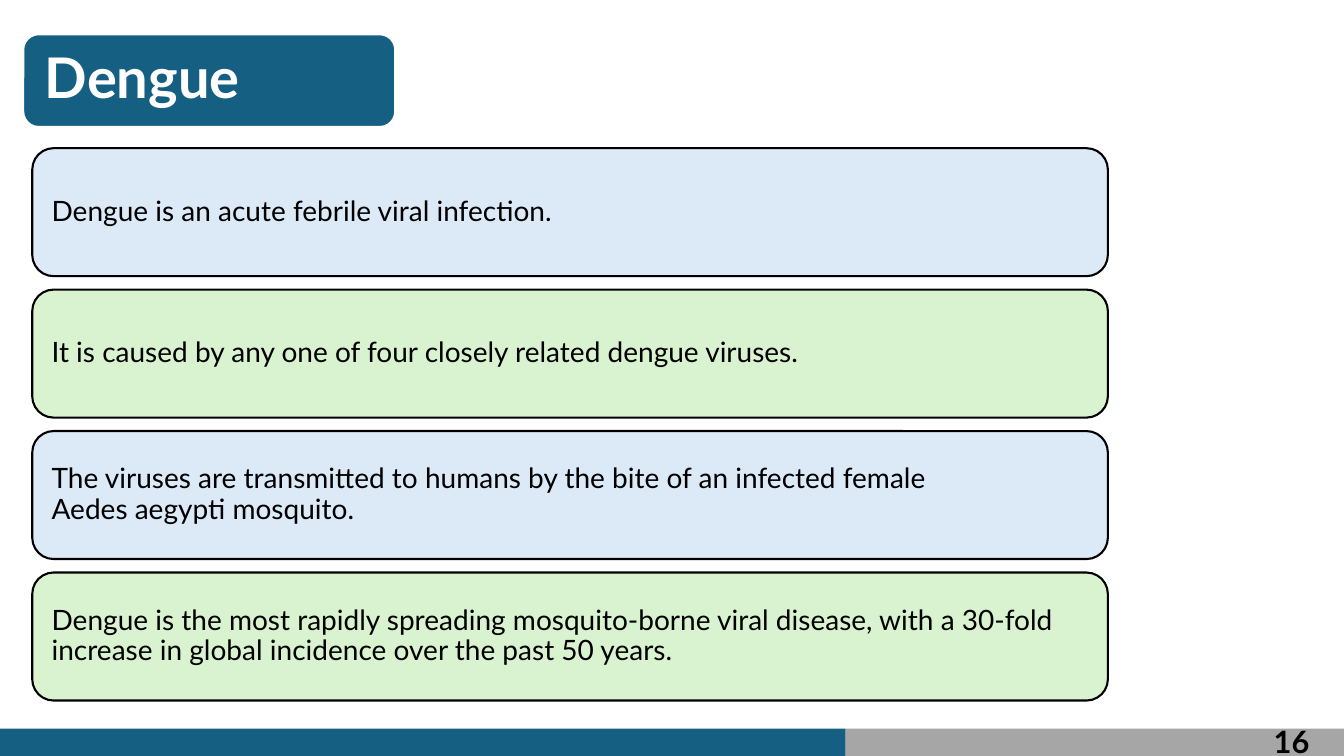
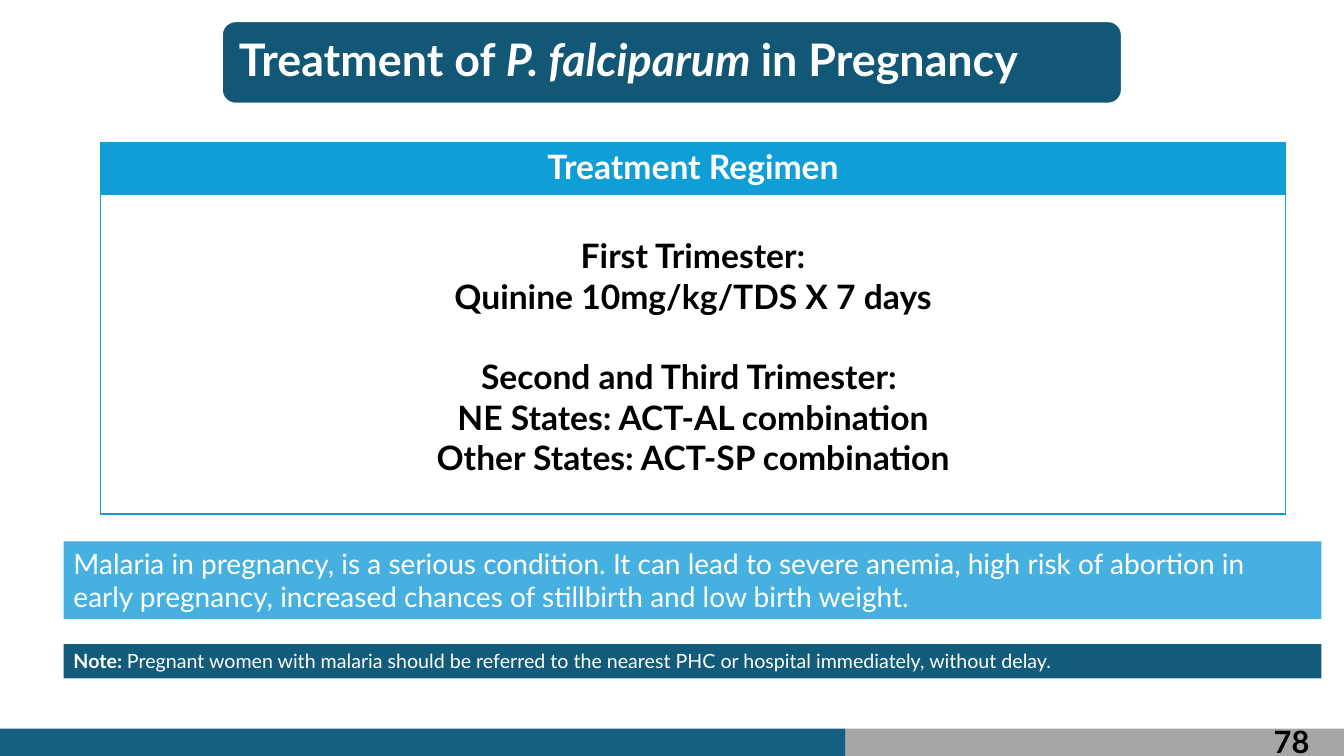
from lxml import etree
from pptx import Presentation
from pptx.dml.color import RGBColor
from pptx.enum.shapes import MSO_SHAPE
from pptx.enum.text import MSO_ANCHOR, PP_ALIGN
from pptx.oxml.ns import qn
from pptx.util import Inches, Pt

RECTANGLE, ROUNDED = MSO_SHAPE.RECTANGLE, MSO_SHAPE.ROUNDED_RECTANGLE
TOP, MIDDLE = MSO_ANCHOR.TOP, MSO_ANCHOR.MIDDLE
LEFT, CENTER = PP_ALIGN.LEFT, PP_ALIGN.CENTER

# Palette
WHITE, BLACK, GREY = "FFFFFF", "000000", "A6A6A6"
TEAL, DEEP_TEAL, DARK_TEAL = "156082", "135776", "135B7B"
BLUE, SKY = "0F9ED5", "46B1E1"
PALE_BLUE, PALE_GREEN = "DCEAF7", "D9F2D0"


def color(value):
    return RGBColor.from_string(value)


class Deck:
    """Style and current slide; positions are percentages of the slide size."""

    font_name = "Lato"
    title_format = {"size": Pt(40), "bold": True}
    number_format = {"size": Pt(22), "bold": True}
    table_format = {"size": Pt(24), "bold": True}
    footer_top, footer_split = 96.4, 62.93

    def __init__(self):
        self.presentation = Presentation()
        self.presentation.slide_width = Inches(13.333)
        self.presentation.slide_height = Inches(7.5)
        self.slide = None

    def place(self, left, top, width, height):
        across = self.presentation.slide_width / 100
        down = self.presentation.slide_height / 100
        return [round(left * across), round(top * down),
                round(width * across), round(height * down)]

    # Text
    def add_runs(self, paragraph, runs, text_format, text_color, align=LEFT, spacing=1.0):
        paragraph.alignment = align
        paragraph.line_spacing = spacing
        for text, changes in runs:
            run = paragraph.add_run()
            run.text = text
            settings = {"name": self.font_name, **text_format, **changes}
            for name, value in settings.items():
                setattr(run.font, name, value)
            run.font.color.rgb = color(text_color)

    def frame(self, shape, insets, anchor):
        text_frame = shape.text_frame
        text_frame.word_wrap = True
        text_frame.vertical_anchor = anchor
        for side, inset in zip(("left", "top", "right", "bottom"), insets):
            setattr(text_frame, f"margin_{side}", Inches(inset))
        return text_frame.paragraphs[0]

    # Shapes
    def box(self, area, fill, kind=RECTANGLE, line=None):
        shape = self.slide.shapes.add_shape(kind, *self.place(*area))
        shape.shadow.inherit = False
        shape.fill.solid()
        shape.fill.fore_color.rgb = color(fill)
        if line:
            shape.line.color.rgb = color(line)
            shape.line.width = Pt(1.5)
        else:
            shape.line.fill.background()
        return shape

    def title(self, area, runs, fill=TEAL, size=40, inset=0.17):
        shape = self.box(area, fill, ROUNDED, WHITE)
        paragraph = self.frame(shape, [inset] * 4, MIDDLE)
        self.add_runs(paragraph, runs, {**self.title_format, "size": Pt(size)},
                      WHITE, spacing=0.9)

    def card(self, area, text, fill, right_inset):
        shape = self.box(area, fill, ROUNDED, BLACK)
        paragraph = self.frame(shape, (0.13, 0.13, right_inset, 0.13), MIDDLE)
        self.add_runs(paragraph, [(text, {})], {"size": Pt(20)}, BLACK, spacing=0.9)

    def banner(self, area, runs, fill, size):
        shape = self.box(area, fill)
        paragraph = self.frame(shape, (0.1, 0.05, 0.1, 0.05), TOP)
        self.add_runs(paragraph, runs, {"size": Pt(size)}, WHITE)

    # Slide with the footer band and page number
    def new_slide(self, number):
        layout = self.presentation.slide_layouts[6]
        self.slide = self.presentation.slides.add_slide(layout)
        height = 100 - self.footer_top
        self.box((0, self.footer_top, self.footer_split, height), TEAL)
        self.box((self.footer_split, self.footer_top, 100 - self.footer_split, height), GREY)
        label = self.slide.shapes.add_textbox(*self.place(92.2, 96.2, 7.8, 3.8))
        paragraph = self.frame(label, [0] * 4, TOP)
        self.add_runs(paragraph, [(str(number), {})], self.number_format,
                      BLACK, CENTER, 0.9)

    # Table
    def border(self, cell, line_color):
        properties = cell._tc.get_or_add_tcPr()
        for side in "LRTB":
            line = etree.SubElement(properties, qn(f"a:ln{side}"), w=str(Pt(1)))
            fill = etree.SubElement(line, qn("a:solidFill"))
            etree.SubElement(fill, qn("a:srgbClr"), val=line_color)

    def table(self, area, rows):
        """Each row: share of slide height, top inset, fill, text colour, lines."""
        table = self.slide.shapes.add_table(len(rows), 1, *self.place(*area)).table
        table.first_row = table.horz_banding = False
        for index, (height, top_inset, fill, text_color, lines) in enumerate(rows):
            table.rows[index].height = self.place(0, 0, 0, height)[3]
            cell = table.cell(index, 0)
            self.border(cell, BLUE)
            cell.fill.solid()
            cell.fill.fore_color.rgb = color(fill)
            cell.margin_left = cell.margin_right = Inches(0.07)
            cell.margin_top, cell.margin_bottom = Inches(top_inset), 0
            text_frame = cell.text_frame
            for position, (text, space_before) in enumerate(lines):
                paragraph = text_frame.add_paragraph() if position else text_frame.paragraphs[0]
                self.add_runs(paragraph, [(text, {})], self.table_format, text_color, CENTER)
                if space_before:
                    paragraph.space_before = Pt(space_before)


def dengue_slide(deck):
    deck.new_slide(16)
    deck.title((1.73, 4.53, 27.68, 12.27), [("Dengue", {})])
    # Text and right inset of each card
    facts = [
        ("Dengue is an acute febrile viral infection.", 0.13),
        ("It is caused by any one of four closely related dengue viruses.", 0.13),
        ("The viruses are transmitted to humans by the bite of an infected female "
         "Aedes aegypti mosquito.", 1.3),
        ("Dengue is the most rapidly spreading mosquito-borne viral disease, with a "
         "30-fold increase in global incidence over the past 50 years.", 0.4),
    ]
    first_top, pitch = 19.6, 18.71
    for index, (text, right_inset) in enumerate(facts):
        area = (2.4, first_top + index * pitch, 80.03, 16.93)
        deck.card(area, text, (PALE_BLUE, PALE_GREEN)[index % 2], right_inset)


def pregnancy_slide(deck):
    deck.new_slide(78)
    regimen = [
        ("First Trimester:", 0),
        ("Quinine 10mg/kg/TDS X 7 days", 0),
        ("Second and Third Trimester: ", 28.8),
        ("NE States: ACT-AL combination", 0),
        ("Other States: ACT-SP combination", 0),
    ]
    deck.table((7.5, 18.8, 88.13, 49.2), [
        (6.93, 0.04, BLUE, WHITE, [("Treatment Regimen", 0)]),
        (42.27, 0.41, WHITE, BLACK, regimen),
    ])
    deck.title((16.5, 2.8, 66.98, 10.93),
               [("Treatment of ", {}), ("P. falciparum ", {"italic": True}),
                ("in Pregnancy", {})],
               DEEP_TEAL, 32, 0.13)
    # Warning and note
    deck.banner((4.73, 71.6, 93.6, 10.27),
                [("Malaria in pregnancy, is a serious condition. It can lead to severe "
                  "anemia, high risk of abortion in early pregnancy, increased chances "
                  "of stillbirth and low birth weight.", {})], SKY, 20)
    deck.banner((4.73, 85.2, 93.6, 4.53),
                [("Note: ", {"bold": True}),
                 ("Pregnant women with malaria should be referred to the nearest PHC "
                  "or hospital immediately, without delay.", {})], DARK_TEAL, 14)


def main():
    deck = Deck()
    dengue_slide(deck)
    pregnancy_slide(deck)
    deck.presentation.save("out.pptx")


if __name__ == "__main__":
    main()
